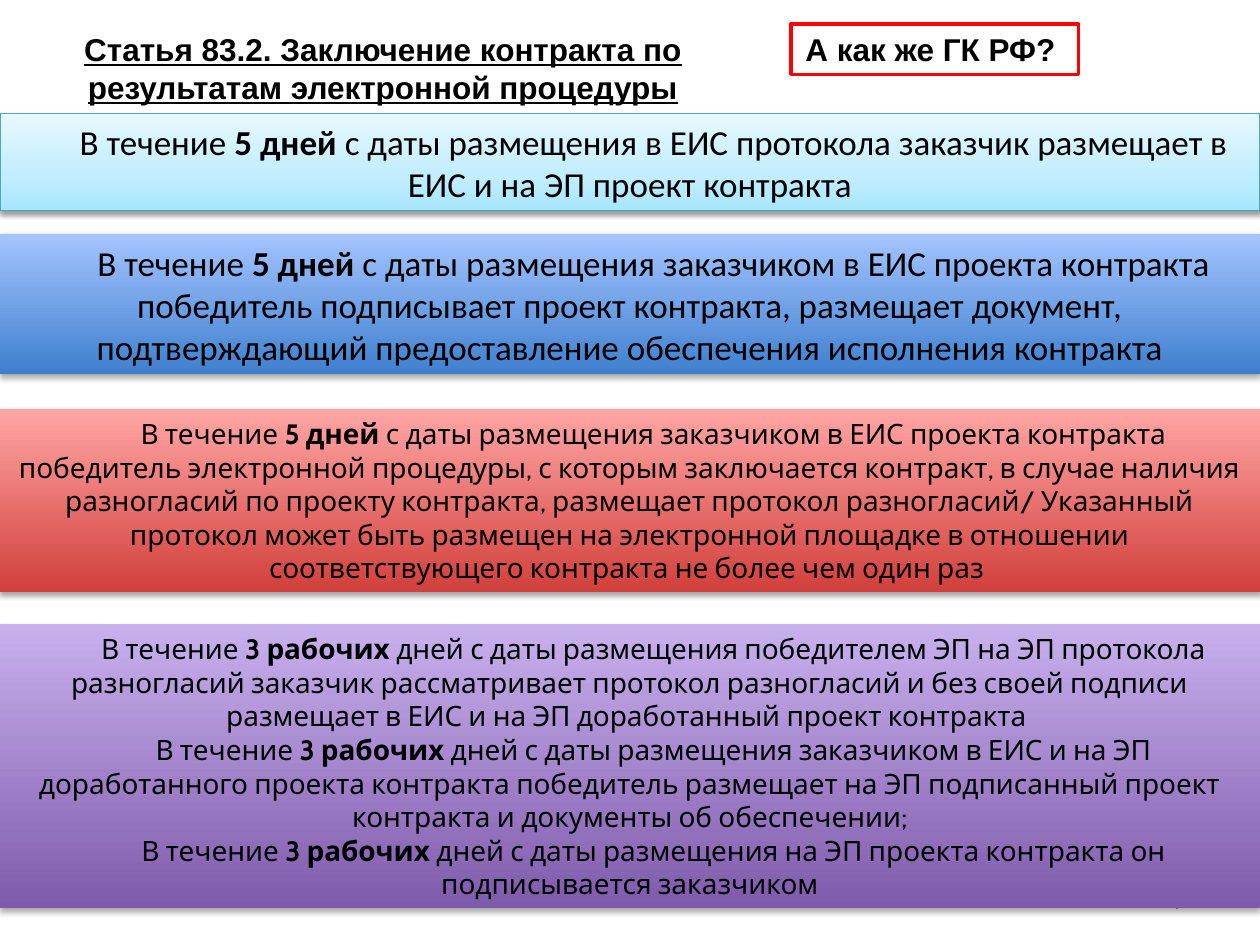
"""Build the slide on the time limits for concluding a contract after an electronic procedure."""
from copy import deepcopy

from lxml import etree
from pptx import Presentation
from pptx.dml.color import RGBColor
from pptx.enum.shapes import MSO_SHAPE
from pptx.enum.text import MSO_ANCHOR, PP_ALIGN
from pptx.oxml.ns import qn
from pptx.util import Cm, Pt

RECTANGLE = MSO_SHAPE.RECTANGLE
TOP, MIDDLE = MSO_ANCHOR.TOP, MSO_ANCHOR.MIDDLE
CENTER, RIGHT = PP_ALIGN.CENTER, PP_ALIGN.RIGHT

BLACK = RGBColor(0x00, 0x00, 0x00)
GRAY = RGBColor(0x89, 0x89, 0x89)
RED = RGBColor(0xFF, 0x00, 0x00)
TEAL = RGBColor(0x46, 0xAA, 0xC5)
CYAN_STOPS = [(0, RGBColor(0xA7, 0xE6, 0xFF)), (0.35, RGBColor(0xC1, 0xED, 0xFF)),
              (1, RGBColor(0xE7, 0xF8, 0xFF))]
BLUE_STOPS = [(0, RGBColor(0x3F, 0x80, 0xCE)), (1, RGBColor(0xA4, 0xC4, 0xFF))]
RED_STOPS = [(0, RGBColor(0xD1, 0x40, 0x3C)), (1, RGBColor(0xFF, 0xA6, 0xA5))]
PURPLE_STOPS = [(0, RGBColor(0x7F, 0x5B, 0xAB)), (1, RGBColor(0xC8, 0xB0, 0xED))]

WIDTH, HEIGHT = 25.4, 19.05
INDENT = 0.96
TITLE = "Статья 83.2. Заключение контракта по результатам электронной процедуры"
QUESTION = "А как же ГК РФ? "
PAGE_NUMBER = "7"
LEAD = "В течение "

BANDS = [
    {"top": 2.29, "height": 1.96, "stops": CYAN_STOPS, "line": TEAL, "font": "Calibri", "size": 20,
     "steps": [("5 дней ", "с даты размещения в ЕИС протокола заказчик размещает в ЕИС и на ЭП "
                "проект контракта")]},
    {"top": 4.72, "height": 2.82, "stops": BLUE_STOPS, "line": None, "font": "Calibri", "size": 20,
     "steps": [("5 дней ", "с даты размещения заказчиком в ЕИС проекта контракта победитель "
                "подписывает проект контракта, размещает документ, подтверждающий предоставление "
                "обеспечения исполнения контракта")]},
    {"top": 8.25, "height": 3.68, "stops": RED_STOPS, "line": None, "font": "Cabin", "size": 16,
     "steps": [("5 дней ", "с даты размещения заказчиком в ЕИС проекта контракта победитель "
                "электронной процедуры, с которым заключается контракт, в случае наличия "
                "разногласий по проекту контракта, размещает протокол разногласий/ Указанный "
                "протокол может быть размещен на электронной площадке в отношении "
                "соответствующего контракта не более чем один раз ")]},
    {"top": 12.58, "height": 5.73, "stops": PURPLE_STOPS, "line": None, "font": "Cabin", "size": 16,
     "steps": [("3 рабочих ", "дней с даты размещения победителем ЭП на ЭП протокола разногласий "
                "заказчик рассматривает протокол разногласий и без своей подписи размещает в ЕИС "
                "и на ЭП доработанный проект контракта "),
               ("3 рабочих ", "дней с даты размещения заказчиком в ЕИС и на ЭП доработанного "
                "проекта контракта победитель размещает на ЭП подписанный проект контракта и "
                "документы об обеспечении;"),
               ("3 рабочих ", "дней с даты размещения на ЭП проекта контракта он подписывается "
                "заказчиком")]},
]


def write_text(shape, paragraphs, font, size, color=BLACK, align=CENTER, anchor=TOP,
               underline=False, indent=0, wrap=True):
    """Write paragraphs, each a list of (text, bold) runs, into a shape."""
    frame = shape.text_frame
    frame.word_wrap = wrap
    frame.vertical_anchor = anchor
    for index, runs in enumerate(paragraphs):
        paragraph = frame.add_paragraph() if index else frame.paragraphs[0]
        paragraph.alignment = align
        if indent:
            properties = paragraph._p.get_or_add_pPr()
            properties.set("marL", "0")
            properties.set("indent", str(Cm(indent)))
        for text, bold in runs:
            run = paragraph.add_run()
            run.text = text
            run.font.name = font
            run.font.size = Pt(size)
            run.font.bold = bold
            run.font.underline = underline
            run.font.color.rgb = color


def add_shadow(shape, opacity, distance):
    """Give a shape a soft shadow straight below it."""
    shape.shadow.inherit = False
    effects = shape._element.spPr.find(qn("a:effectLst"))
    shadow = etree.SubElement(effects, qn("a:outerShdw"), blurRad=str(Pt(3.1)),
                              dist=str(Pt(distance)), dir="5400000", rotWithShape="0")
    color = etree.SubElement(shadow, qn("a:srgbClr"), val=str(BLACK))
    etree.SubElement(color, qn("a:alpha"), val=str(opacity * 1000))


def fill_gradient(shape, stops):
    """Fill a shape with a gradient that runs from bottom to top."""
    shape.fill.gradient()
    shape.fill.gradient_angle = 90
    stop_list = next(shape._element.spPr.iter(qn("a:gsLst")))
    for _ in stops[2:]:
        stop_list.append(deepcopy(stop_list[0]))
    for stop, (position, color) in zip(shape.fill.gradient_stops, stops):
        stop.position = position
        stop.color.rgb = color


def add_band(slide, band):
    """Add one full-width band with its steps."""
    shape = slide.shapes.add_shape(RECTANGLE, 0, Cm(band["top"]), Cm(WIDTH), Cm(band["height"]))
    fill_gradient(shape, band["stops"])
    if band["line"]:
        shape.line.color.rgb = band["line"]
        shape.line.width = Pt(0.75)
        add_shadow(shape, 38, 1.6)
    else:
        shape.line.fill.background()
        add_shadow(shape, 35, 1.8)
    paragraphs = [[(LEAD, False), (term, True), (action, False)] for term, action in band["steps"]]
    write_text(shape, paragraphs, band["font"], band["size"], anchor=MIDDLE, indent=INDENT)


def main():
    """Create the presentation and save it."""
    presentation = Presentation()
    presentation.slide_width, presentation.slide_height = Cm(WIDTH), Cm(HEIGHT)
    slide = presentation.slides.add_slide(presentation.slide_layouts[6])

    number = slide.shapes.add_textbox(Cm(18.2), Cm(17.66), Cm(5.93), Cm(1.01))
    write_text(number, [[(PAGE_NUMBER, False)]], "Calibri", 12, color=GRAY, align=RIGHT, anchor=MIDDLE)
    title = slide.shapes.add_textbox(Cm(1.37), Cm(0.48), Cm(12.7), Cm(1.8))
    write_text(title, [[(TITLE, True)]], "Arial", 18, underline=True)

    for band in BANDS:
        add_band(slide, band)

    question = slide.shapes.add_shape(RECTANGLE, Cm(15.95), Cm(0.48), Cm(5.79), Cm(1.02))
    question.shadow.inherit = False
    question.fill.background()
    question.line.color.rgb = RED
    question.line.width = Pt(2)
    write_text(question, [[(QUESTION, True)]], "Arial", 18, wrap=False)

    presentation.save("out.pptx")


if __name__ == "__main__":
    main()
